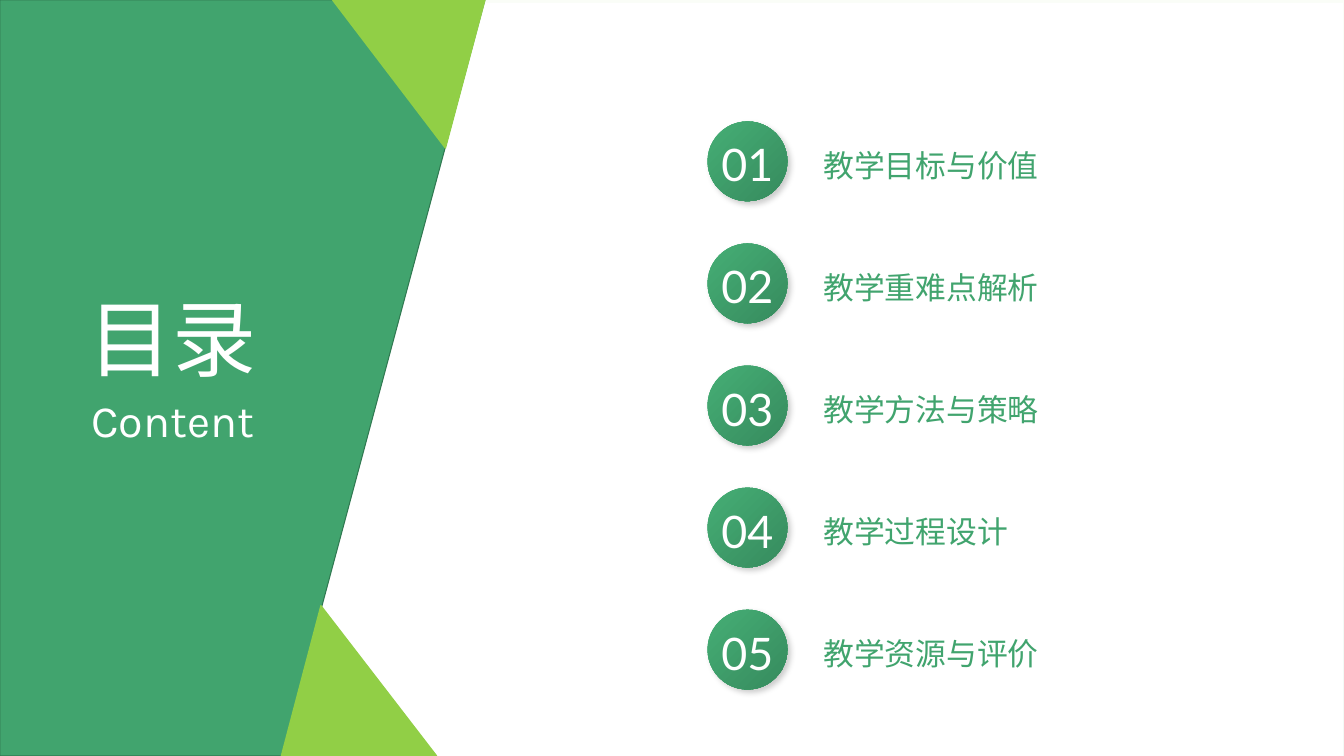
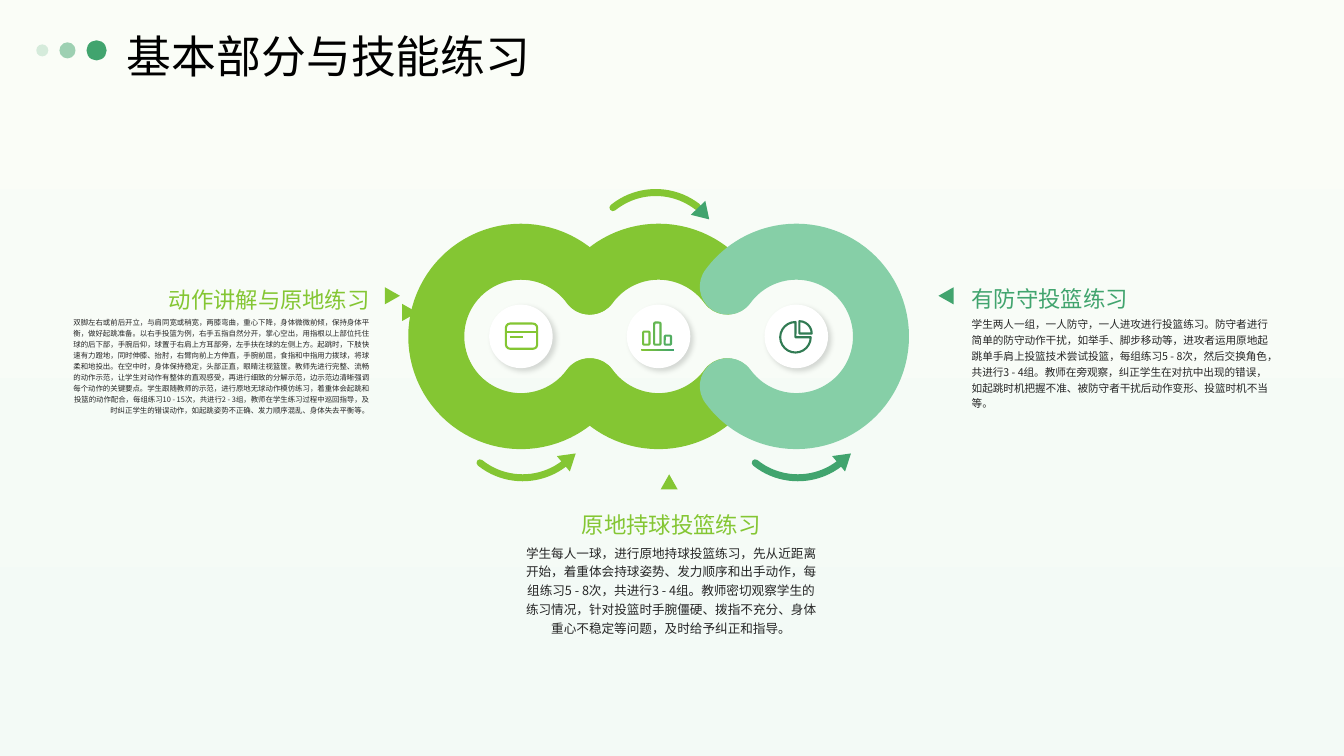
import dataclasses

import lxml.etree
import pptx
import pptx.dml.color
import pptx.enum.shapes
import pptx.enum.text
import pptx.oxml.ns
import pptx.util

Pt = pptx.util.Pt
qn = pptx.oxml.ns.qn
SHAPE = pptx.enum.shapes.MSO_SHAPE
ALIGN = pptx.enum.text.PP_ALIGN
ANCHOR = pptx.enum.text.MSO_ANCHOR


@dataclasses.dataclass(frozen=True)
class Theme:
    # Colours
    green: str = "41A46E"
    lime: str = "84C633"
    accent: str = "91CF46"
    mint: str = "86CFA7"
    edge: str = "307951"
    pie: str = "317B53"
    white: str = "FFFFFF"
    black: str = "000000"
    body: str = "262626"
    backdrop: tuple = ("F3FAF6", "FAFDF7")
    badge: tuple = ("45AE75", "378B5E")
    bars: tuple = ("75BF41", "63B651", "52AD60")
    # Fonts and type sizes
    display: str = "Karla"
    digits: str = "Lato"
    sans: str = "Noto Sans CJK SC"
    cover_size: float = 60
    title_size: float = 32
    item_size: float = 22
    heading_size: float = 16
    # Slide size
    width: float = 960
    height: float = 540


class Deck:
    """Holds the theme and the current slide, and draws elements in points."""

    def __init__(self, theme):
        self.theme = theme
        self.presentation = pptx.Presentation()
        self.presentation.slide_width = Pt(theme.width)
        self.presentation.slide_height = Pt(theme.height)
        self.slide = None

    def add_slide(self):
        layout = self.presentation.slide_layouts[6]
        self.slide = self.presentation.slides.add_slide(layout)
        self.shape(SHAPE.RECTANGLE, 0, 0, self.theme.width, self.theme.height,
                   fill=self.theme.backdrop, angle=90)

    def paint(self, shape, fill=None, line=None, weight=1, angle=0, alpha=None):
        """A pair of colours as fill makes a gradient."""
        color = pptx.dml.color.RGBColor.from_string
        shape.shadow.inherit = False
        if fill is None:
            shape.fill.background()
        elif isinstance(fill, tuple):
            shape.fill.gradient()
            shape.fill.gradient_angle = angle
            for stop, value in zip(shape.fill.gradient_stops, fill):
                stop.color.rgb = color(value)
        else:
            shape.fill.solid()
            shape.fill.fore_color.rgb = color(fill)
        if alpha:
            source = shape.element.spPr.find(qn("a:solidFill")).find(qn("a:srgbClr"))
            lxml.etree.SubElement(source, qn("a:alpha"), val=str(alpha * 1000))
        if line is None:
            shape.line.fill.background()
        else:
            shape.line.color.rgb = color(line)
            shape.line.width = Pt(weight)
        return shape

    def shape(self, kind, left, top, width, height, rotation=0, adjust=(), **style):
        shape = self.slide.shapes.add_shape(
            kind, Pt(left), Pt(top), Pt(width), Pt(height))
        shape.rotation = rotation
        for index, value in enumerate(adjust):
            shape.adjustments[index] = value
        return self.paint(shape, **style)

    def circle(self, center_x, center_y, diameter, **style):
        return self.shape(SHAPE.OVAL, center_x - diameter / 2,
                          center_y - diameter / 2, diameter, diameter, **style)

    def triangle(self, center_x, center_y, width, height, rotation, color):
        self.shape(SHAPE.ISOSCELES_TRIANGLE, center_x - width / 2,
                   center_y - height / 2, width, height, rotation, fill=color)

    def sector(self, kind, center_x, center_y, radius, start, end, color, weight):
        """Arc or pie, clockwise from start to end in degrees."""
        shape = self.shape(kind, center_x - radius, center_y - radius,
                           2 * radius, 2 * radius, adjust=(start * 0.6, end * 0.6),
                           line=color, weight=weight)
        shape.element.spPr.find(qn("a:ln")).set("cap", "rnd")

    def polygon(self, points, **style):
        corners = [(Pt(x), Pt(y)) for x, y in points]
        builder = self.slide.shapes.build_freeform(*corners[0], scale=1.0)
        builder.add_line_segments(corners[1:], close=True)
        return self.paint(builder.convert_to_shape(), **style)

    def line(self, x1, y1, x2, y2, color, weight):
        connector = self.slide.shapes.add_connector(
            pptx.enum.shapes.MSO_CONNECTOR.STRAIGHT, Pt(x1), Pt(y1), Pt(x2), Pt(y2))
        connector.line.color.rgb = pptx.dml.color.RGBColor.from_string(color)
        connector.line.width = Pt(weight)
        lxml.etree.SubElement(connector.element.spPr, qn("a:effectLst"))

    def shadow(self, shape, opacity, blur, distance):
        effects = shape.element.spPr.find(qn("a:effectLst"))
        outer = lxml.etree.SubElement(
            effects, qn("a:outerShdw"), blurRad=str(Pt(blur)), dist=str(Pt(distance)),
            dir="2700000", algn="tl", rotWithShape="0")
        color = lxml.etree.SubElement(outer, qn("a:srgbClr"), val=self.theme.black)
        lxml.etree.SubElement(color, qn("a:alpha"), val=str(opacity * 1000))

    def fill_text(self, shape, words, size, color, font, align=ALIGN.LEFT,
                  anchor=ANCHOR.TOP, spacing=1.1, wrap=True):
        frame = shape.text_frame
        frame.word_wrap = wrap
        frame.vertical_anchor = anchor
        frame.margin_left = frame.margin_right = 0
        frame.margin_top = frame.margin_bottom = 0
        paragraph = frame.paragraphs[0]
        paragraph.alignment = align
        paragraph.line_spacing = spacing
        run = paragraph.add_run()
        run.text = words
        run.font.size = Pt(size)
        run.font.name = font
        run.font.color.rgb = pptx.dml.color.RGBColor.from_string(color)
        latin = run.font._element.find(qn("a:latin"))
        latin.addnext(latin.makeelement(qn("a:ea"), {"typeface": font}))

    def text(self, left, top, width, height, words, size, color, font, **style):
        box = self.slide.shapes.add_textbox(Pt(left), Pt(top), Pt(width), Pt(height))
        self.fill_text(box, words, size, color, font, **style)

    def title(self, words):
        theme = self.theme
        self.text(90.7, 18.7, 856, 33.8, words, theme.title_size, theme.black,
                  theme.sans, anchor=ANCHOR.MIDDLE, spacing=1.2)
        for center_x, diameter, alpha in ((69, 14.4, None), (48.2, 11.5, 50), (30.2, 8.6, 20)):
            self.circle(center_x, 36, diameter, fill=theme.green, alpha=alpha)

    def curved_arrow(self, center_x, center_y, middle, color, head_color, head):
        """Arc centred on an angle; head is its offset and its rotation."""
        self.sector(SHAPE.ARC, center_x, center_y, 48.6,
                    middle - 38.4, middle + 38.4, color, 5)
        offset_x, offset_y, rotation = head
        self.triangle(center_x + offset_x, center_y + offset_y, 14.4, 11.5,
                      rotation, head_color)

    def note(self, left, top, heading, words, size, color, align):
        theme = self.theme
        self.text(left, top, 213, 41.8, heading, theme.heading_size, color,
                  theme.sans, align=align, anchor=ANCHOR.BOTTOM)
        self.text(left, top + 44.3, 212.4, 77.8, words, size, theme.body,
                  theme.sans, align=align, spacing=1.24)


def build_contents(deck):
    theme = deck.theme
    deck.add_slide()
    deck.shape(SHAPE.RECTANGLE, 0.7, 2, 958.6, 538, fill=theme.white)

    # Side panel with two corner wedges
    deck.polygon([(0, 0), (346.4, 0), (201.2, 540), (0, 540)],
                 fill=theme.green, line=theme.edge, weight=0.75)
    deck.polygon([(237.6, 0), (346.4, 0), (318.2, 105.8)],
                 fill=theme.accent, line=theme.accent)
    deck.shape(SHAPE.ISOSCELES_TRIANGLE, 201, 432.7, 110.9, 107.3, adjust=(0.255,),
               fill=theme.accent, line=theme.accent)
    for top, height, words, size in ((197.3, 72.7, "目录", theme.cover_size),
                                     (276.5, 38.9, "Content", theme.title_size)):
        deck.text(38.2, top, 170.6, height, words, size, theme.white, theme.display,
                  align=ALIGN.CENTER)

    # Numbered items
    items = ("教学目标与价值", "教学重难点解析", "教学方法与策略", "教学过程设计", "教学资源与评价")
    for index, item in enumerate(items):
        center_y = 115.2 + 87.2 * index
        badge = deck.circle(533.9, center_y, 57, fill=theme.badge, angle=-45)
        deck.shadow(badge, 20, 4.4, 3.3)
        deck.fill_text(badge, f"{index + 1:02}", theme.title_size, theme.white, theme.digits,
                       align=ALIGN.CENTER, anchor=ANCHOR.MIDDLE, wrap=False)
        deck.text(588.2, center_y - 36.7, 291.6, 73.4, item, theme.item_size,
                  theme.green, theme.display, anchor=ANCHOR.MIDDLE, spacing=1.2)


def build_practice(deck):
    theme = deck.theme
    deck.add_slide()
    deck.title("基本部分与技能练习")

    # Pointers
    for center_x, center_y, rotation, color in (
            (280.3, 211.3, 90, theme.lime), (292.7, 223.2, 90, theme.lime),
            (675.7, 211.3, 270, theme.green), (478, 344.2, 0, theme.lime)):
        deck.triangle(center_x, center_y, 12.2, 10.8, rotation, color)

    # Linked rings
    ring_x, ring_y, radius, joint = (372.1, 470.4, 568.8), 240.3, 60.5, 36
    for center_x, start, end, color in (
            (ring_x[0], joint, 360 - joint, theme.lime),
            (ring_x[1], 180 + joint, 360 - joint, theme.lime),
            (ring_x[1], joint, 180 - joint, theme.lime),
            (ring_x[2], 180 + joint, 180 - joint, theme.mint)):
        deck.sector(SHAPE.ARC, center_x, ring_y, radius, start, end, color, 40)
    for center_x in ring_x:
        deck.shadow(deck.circle(center_x, ring_y, 45.4, fill=theme.white), 15, 4, 3)

    # Curved arrows
    deck.curved_arrow(468.4, 186.1, 269.4, theme.lime, theme.green, (34.2, -33.5, 136))
    for center_x, color in ((373.3, theme.lime), (569.9, theme.green)):
        deck.curved_arrow(center_x, 292.7, 90.4, color, color, (33.5, 34.9, 50))

    # Card icon
    deck.shape(SHAPE.ROUNDED_RECTANGLE, 361.4, 231.1, 22.3, 18, line=theme.lime, weight=1.5)
    deck.line(361.4, 236.9, 383.7, 236.9, theme.lime, 1.5)
    deck.line(364.3, 240.9, 373.3, 240.9, theme.lime, 1.5)

    # Bar icon
    for left, top, color in zip((459.4, 467.3, 474.8), (236.9, 230.4, 239.8), theme.bars):
        deck.shape(SHAPE.ROUNDED_RECTANGLE, left, top, 4.5, 246.2 - top,
                   line=color, weight=1.5)
    deck.shape(SHAPE.ROUNDED_RECTANGLE, 457.9, 249.1, 23.4, 1.6, adjust=(0.5,),
               fill=(theme.lime, theme.green))

    # Pie icon
    deck.sector(SHAPE.PIE, 568.2, 240.9, 10.9, 0, 270, theme.pie, 1.5)
    deck.sector(SHAPE.PIE, 571, 238.2, 8.8, 270, 0, theme.pie, 1.5)

    # Notes around the rings
    deck.note(51.2, 181.6, "动作讲解与原地练习", "双脚左右或前后开立，与肩同宽或稍宽，两膝弯曲，重心下降，身体微微前倾，保持身体平衡，做好起跳准备。以右手投篮为例，右手五指自然分开，掌心空出，用指根以上部位托住球的后下部，手腕后仰，球置于右肩上方耳部旁，左手扶在球的左侧上方。起跳时，下肢快速有力蹬地，同时伸膝、抬肘，右臂向前上方伸直，手腕前屈，食指和中指用力拨球，将球柔和地投出。在空中时，身体保持稳定，头部正直，眼睛注视篮筐。教师先进行完整、流畅的动作示范，让学生对动作有整体的直观感受，再进行细致的分解示范，边示范边清晰强调每个动作的关键要点。学生跟随教师的示范，进行原地无球动作模仿练习，着重体会起跳和投篮的动作配合，每组练习10 - 15次，共进行2 - 3组，教师在学生练习过程中巡回指导，及时纠正学生的错误动作，如起跳姿势不正确、发力顺序混乱、身体失去平衡等。",
              5.3, theme.lime, ALIGN.RIGHT)
    deck.note(694.1, 180.7, "有防守投篮练习", "学生两人一组，一人防守，一人进攻进行投篮练习。防守者进行简单的防守动作干扰，如举手、脚步移动等，进攻者运用原地起跳单手肩上投篮技术尝试投篮，每组练习5 - 8次，然后交换角色，共进行3 - 4组。教师在旁观察，纠正学生在对抗中出现的错误，如起跳时机把握不准、被防守者干扰后动作变形、投篮时机不当等。",
              7.6, theme.green, ALIGN.LEFT)
    deck.note(373, 342.7, "原地持球投篮练习", "学生每人一球，进行原地持球投篮练习，先从近距离开始，着重体会持球姿势、发力顺序和出手动作，每组练习5 - 8次，共进行3 - 4组。教师密切观察学生的练习情况，针对投篮时手腕僵硬、拨指不充分、身体重心不稳定等问题，及时给予纠正和指导。",
              9, theme.lime, ALIGN.CENTER)


def main():
    deck = Deck(Theme())
    build_contents(deck)
    build_practice(deck)
    deck.presentation.save("out.pptx")


if __name__ == "__main__":
    main()
